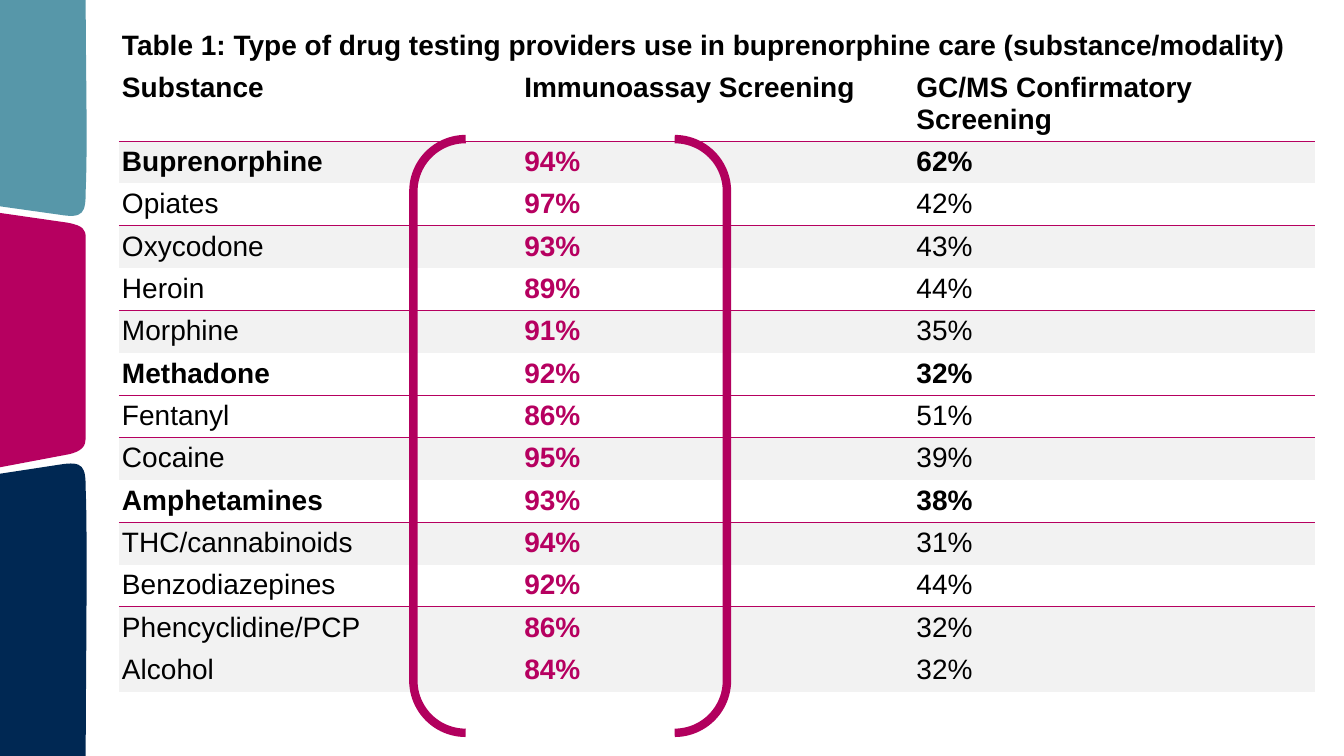
from lxml import etree
from pptx import Presentation
from pptx.dml.color import RGBColor
from pptx.enum.shapes import MSO_SHAPE
from pptx.enum.text import MSO_ANCHOR
from pptx.oxml.ns import qn
from pptx.util import Inches, Pt

BRACKETS = MSO_SHAPE.DOUBLE_BRACKET
TOP, BOTTOM = MSO_ANCHOR.TOP, MSO_ANCHOR.BOTTOM

MAGENTA = RGBColor(0xB6, 0x00, 0x60)
BRACKET_MAGENTA = RGBColor(0xB2, 0x00, 0x5E)
TEAL = RGBColor(0x57, 0x97, 0xA9)
NAVY = RGBColor(0x00, 0x28, 0x53)
BLACK = RGBColor(0x00, 0x00, 0x00)
BAND_GREY = RGBColor(0xF2, 0xF2, 0xF2)

CAPTION = "Table 1: Type of drug testing providers use in buprenorphine care (substance/modality)"
HEADINGS = ("Substance", "Immunoassay Screening", "GC/MS Confirmatory Screening")
RATES = [
    ("Buprenorphine", "94%", "62%"),
    ("Opiates", "97%", "42%"),
    ("Oxycodone", "93%", "43%"),
    ("Heroin", "89%", "44%"),
    ("Morphine", "91%", "35%"),
    ("Methadone", "92%", "32%"),
    ("Fentanyl", "86%", "51%"),
    ("Cocaine", "95%", "39%"),
    ("Amphetamines", "93%", "38%"),
    ("THC/cannabinoids", "94%", "31%"),
    ("Benzodiazepines", "92%", "44%"),
    ("Phencyclidine/PCP", "86%", "32%"),
    ("Alcohol", "84%", "32%"),
]
EMPHASISED = {"Substance", "Buprenorphine", "Methadone", "Amphetamines"}
SHADED = {"Buprenorphine", "Oxycodone", "Morphine", "Cocaine",
          "THC/cannabinoids", "Phencyclidine/PCP", "Alcohol"}
RULED_ABOVE = (SHADED | {"Fentanyl"}) - {"Alcohol"}

SIDE_PANELS = [
    (MAGENTA, (-0.01, 2.36), [
        [(-0.01, 2.28), (-0.02, 2.22), (-0.02, 2.11)],
        [(0.67, 2.21)],
        [(0.83, 2.24), (0.85, 2.28), (0.85, 2.36)],
        [(0.85, 4.35)],
        [(0.85, 4.42), (0.82, 4.48), (0.67, 4.51)],
        [(-0.02, 4.64)],
        [(-0.02, 4.53), (0, 4.42), (0, 4.35)],
        [(0, 3.68), (-0.01, 3.02), (-0.01, 2.36)],
    ]),
    (TEAL, (-0.05, 2.04), [
        [(0.59, 2.13)],
        [(0.83, 2.17), (0.85, 2.11), (0.85, 1.89)],
        [(0.87, 1.4), (0.85, 0.73), (0.85, -0.01)],
        [(-0.01, -0.01)],
        [(-0.01, 0.59), (-0.05, 1.45), (-0.05, 2.04)],
    ]),
    (NAVY, (0, 4.7), [
        [(0.59, 4.61)],
        [(0.83, 4.57), (0.85, 4.63), (0.85, 4.86)],
        [(0.87, 5.34), (0.85, 6.78), (0.85, 7.51)],
        [(0, 7.51)],
        [(-0.01, 6.92), (0, 5.3), (0, 4.7)],
    ]),
]

COLUMN_WIDTHS = (3.99, 3.89, 3.98)
ROW_HEIGHT, FENTANYL_HEIGHT = 0.25, 0.33
TABLE_HEIGHT = 7.02
UNITS_PER_INCH = 1000
NO_GRID_STYLE = "{2D5ABB26-0587-4C30-8999-92F81FD0307C}"


def add_panel(slide, colour, start, segments):
    points = [(round(x * UNITS_PER_INCH), round(y * UNITS_PER_INCH))
              for x, y in [start, *sum(segments, [])]]
    builder = slide.shapes.build_freeform(*points[0], scale=Inches(1) / UNITS_PER_INCH)
    builder.add_line_segments(points[1:], close=False)
    panel = builder.convert_to_shape()

    outline = next(panel._element.iter(qn("a:path")))
    vertices = iter(outline.findall(qn("a:lnTo")))
    for segment in segments:
        lines = [next(vertices) for _ in segment]
        if len(lines) == 3:
            curve = etree.Element(qn("a:cubicBezTo"))
            lines[0].addprevious(curve)
            for line in lines:
                curve.append(line[0])
                outline.remove(line)
    etree.SubElement(outline, qn("a:close"))

    panel.shadow.inherit = False
    panel.fill.solid()
    panel.fill.fore_color.rgb = colour
    panel.line.fill.background()


def rule_cell(cell, above, below):
    edges = (("a:lnL", False), ("a:lnR", False), ("a:lnT", above), ("a:lnB", below))
    properties = cell._tc.get_or_add_tcPr()
    for place, (edge, ruled) in enumerate(edges):
        rule = etree.Element(qn(edge), w=str(Pt(1)))
        if ruled:
            fill = etree.SubElement(rule, qn("a:solidFill"))
            etree.SubElement(fill, qn("a:srgbClr"), val=str(MAGENTA))
        else:
            etree.SubElement(rule, qn("a:noFill"))
        properties.insert(place, rule)


def fill_cell(cell, text, bold, colour=BLACK, shaded=False, anchor=TOP):
    cell.margin_left = cell.margin_right = Inches(0.03)
    cell.margin_top, cell.margin_bottom = Inches(0.05), Inches(0.06)
    cell.vertical_anchor = anchor
    if shaded:
        cell.fill.solid()
        cell.fill.fore_color.rgb = BAND_GREY
    else:
        cell.fill.background()
    cell.text = text
    font = cell.text_frame.paragraphs[0].font
    font.name, font.size, font.bold = "Arial", Pt(20), bold
    font.color.rgb = colour


def add_rates_table(slide):
    body = [HEADINGS, *RATES]
    frame = slide.shapes.add_table(
        len(body) + 1, len(COLUMN_WIDTHS), Inches(1.18), Inches(0.25),
        Inches(sum(COLUMN_WIDTHS)), Inches(TABLE_HEIGHT))
    table = frame.table
    table.first_row = table.horz_banding = False
    table._tbl.tblPr.find(qn("a:tableStyleId")).text = NO_GRID_STYLE
    for column, width in zip(table.columns, COLUMN_WIDTHS):
        column.width = Inches(width)
    for row, (substance, *_) in zip(table.rows, [(CAPTION,), *body]):
        row.height = Inches(FENTANYL_HEIGHT if substance == "Fentanyl" else ROW_HEIGHT)
    frame.height = Inches(TABLE_HEIGHT)

    caption = table.cell(0, 0)
    caption.merge(table.cell(0, len(COLUMN_WIDTHS) - 1))
    fill_cell(caption, CAPTION, True, anchor=BOTTOM)
    for c in range(len(COLUMN_WIDTHS)):
        rule_cell(table.cell(0, c), False, False)

    for r, entry in enumerate(body, start=1):
        substance = entry[0]
        ruled_below = r < len(body) and body[r][0] in RULED_ABOVE
        for c, text in enumerate(entry):
            cell = table.cell(r, c)
            screening = c == 1 and r > 1
            fill_cell(cell, text, screening or substance in EMPHASISED,
                      MAGENTA if screening else BLACK, substance in SHADED)
            rule_cell(cell, substance in RULED_ABOVE, ruled_below)


def add_brackets(slide):
    brackets = slide.shapes.add_shape(
        BRACKETS, Inches(4.1), Inches(1.38), Inches(3.11), Inches(5.89))
    brackets.shadow.inherit = False
    brackets.fill.background()
    brackets.line.color.rgb = BRACKET_MAGENTA
    brackets.line.width = Pt(6)


def main():
    deck = Presentation()
    deck.slide_width, deck.slide_height = Inches(13.33), Inches(7.5)
    slide = deck.slides.add_slide(deck.slide_layouts[6])
    for panel in SIDE_PANELS:
        add_panel(slide, *panel)
    add_rates_table(slide)
    add_brackets(slide)
    deck.save("out.pptx")


if __name__ == "__main__":
    main()
